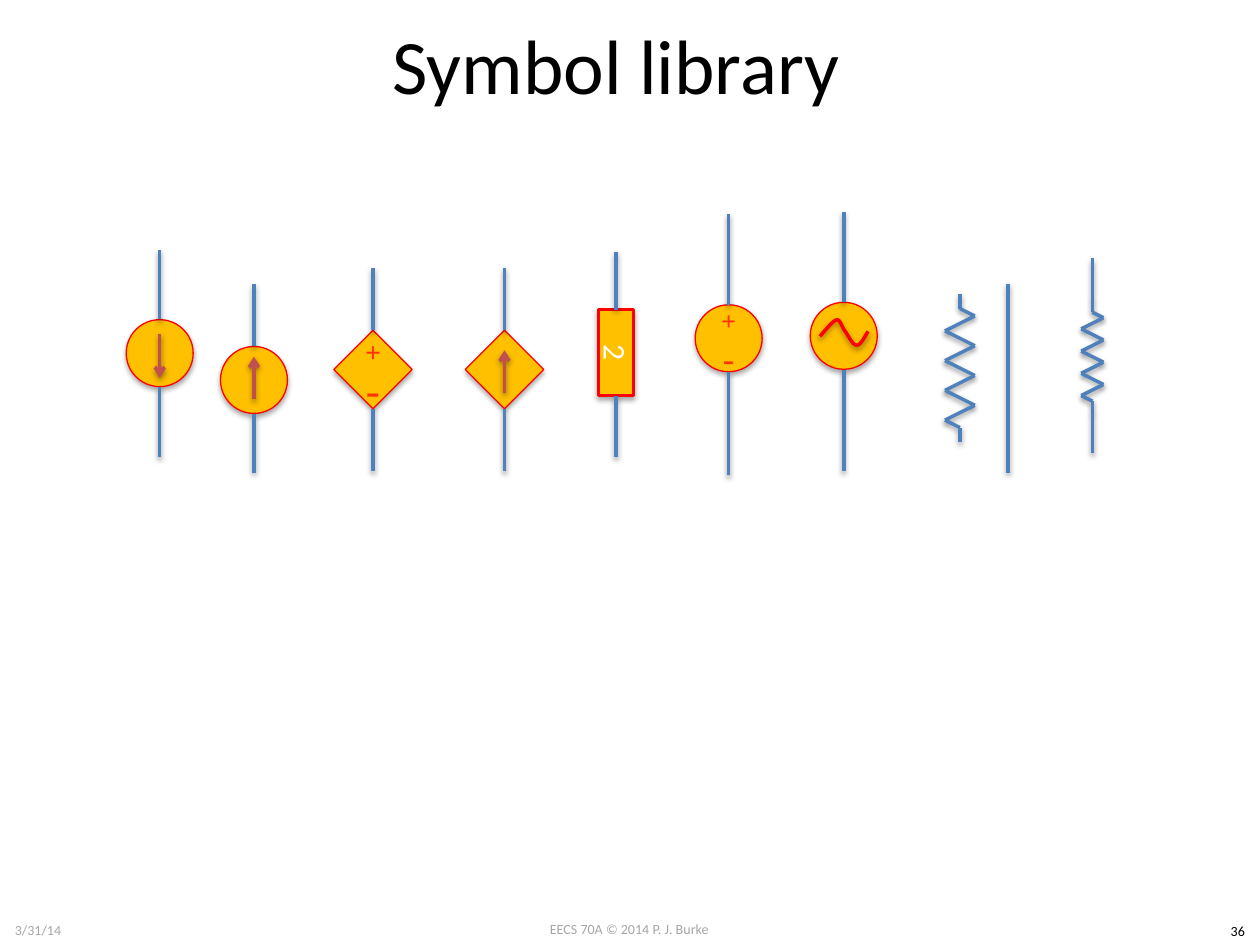
from lxml.etree import SubElement
from pptx import Presentation
from pptx.dml.color import RGBColor
from pptx.enum.shapes import MSO_CONNECTOR, MSO_SHAPE
from pptx.enum.text import MSO_ANCHOR, PP_ALIGN
from pptx.oxml.ns import qn
from pptx.util import Cm, Pt

WIRE, ARROW, RED, GOLD, SIGN = "4F81BD", "C0504D", "FF0000", "FFC000", "FF3300"
GREY, BLACK, WHITE = "A6A6A6", "000000", "FFFFFF"

TITLE = "Symbol library"
FOOTERS = [
    ("EECS 70A © 2014 P. J. Burke", 9.73, 18.44, 5.92, GREY, PP_ALIGN.CENTER),
    ("36", 24.51, 18.47, 0.89, BLACK, PP_ALIGN.CENTER),
    ("3/31/14", 0.05, 18.46, 5.26, GREY, PP_ALIGN.LEFT),
]

BODIES = {
    "circle": dict(kind=MSO_SHAPE.OVAL, width=1.35, height=1.35, turn=0, reach=0.68, line=0.75),
    "diamond": dict(kind=MSO_SHAPE.RECTANGLE, width=1.12, height=1.12, turn=45, reach=0.79, line=0.75),
    "box": dict(kind=MSO_SHAPE.RECTANGLE, width=1.73, height=0.71, turn=90, reach=0.87, line=1.5),
}
SYMBOLS = [
    dict(body="circle", x=3.22, y=7.12, top=5.03, bottom=9.22, arrow=(6.73, 7.62)),
    dict(body="circle", x=5.12, y=7.66, top=5.72, bottom=9.53, arrow=(8.05, 7.19)),
    dict(body="diamond", x=7.52, y=7.45, top=5.41, bottom=9.5, signs=(16, 24)),
    dict(body="diamond", x=10.17, y=7.45, top=5.41, bottom=9.5, arrow=(7.92, 7.06)),
    dict(body="box", x=12.42, y=7.11, top=5.08, bottom=9.22, label="2"),
    dict(body="circle", x=14.69, y=6.82, top=4.32, bottom=9.58, signs=(14.8, 20)),
    dict(body="circle", x=17.01, y=6.77, top=4.27, bottom=9.5, wave=True),
]
WAVE_START = (-0.48, 0.01)
WAVE_CURVES = [
    ((-0.35, -0.14), (-0.23, -0.29), (-0.15, -0.32)),
    ((-0.07, -0.35), (-0.04, -0.17), (0.03, -0.09)),
    ((0.1, 0.01), (0.18, 0.19), (0.26, 0.19)),
    ((0.34, 0.19), (0.41, 0.04), (0.49, -0.09)),
]
RESISTORS = [
    dict(x=19.35, top=5.92, height=3.0, leads=()),
    dict(x=22.02, top=6.07, height=2.24, leads=(5.21, 9.14)),
]
SINGLE_WIRE = (20.32, 5.72, 9.53)


def color(value):
    return RGBColor.from_string(value)


def add_shadow(shape, distance, opacity):
    effects = SubElement(shape._element.spPr, qn("a:effectLst"))
    shadow = SubElement(effects, qn("a:outerShdw"), blurRad=str(Pt(3.1)), dist=str(Pt(distance)),
                        dir="5400000", rotWithShape="0")
    black = SubElement(shadow, qn("a:srgbClr"), val=BLACK)
    SubElement(black, qn("a:alpha"), val=str(opacity * 1000))


def add_wire(shapes, start, end, stroke=WIRE, arrow=False):
    wire = shapes.add_connector(MSO_CONNECTOR.STRAIGHT, *map(Cm, start + end))
    wire.line.color.rgb = color(stroke)
    wire.line.width = Pt(2)
    if arrow:
        SubElement(wire.line._get_or_add_ln(), qn("a:tailEnd"), type="arrow")
    add_shadow(wire, 1.6, 38)


def write(shape, text, size, font, fill, align=PP_ALIGN.CENTER, bold=False):
    para = shape.text_frame.paragraphs[0]
    para.text = text
    para.alignment = align
    para.font.size = Pt(size)
    para.font.name = font
    para.font.bold = bold
    para.font.color.rgb = color(fill)


def add_body(shapes, x, y, kind, width, height, turn, line, reach):
    body = shapes.add_shape(kind, Cm(x - width / 2), Cm(y - height / 2), Cm(width), Cm(height))
    body.rotation = turn
    body.fill.solid()
    body.fill.fore_color.rgb = color(GOLD)
    body.line.color.rgb = color(RED)
    body.line.width = Pt(line)
    add_shadow(body, 1.8, 35)
    return body


def add_sign(shapes, text, x, y, size, bold):
    box = shapes.add_textbox(Cm(x - 0.33), Cm(y - 0.42), Cm(0.66), Cm(0.84))
    frame = box.text_frame
    frame.margin_left = frame.margin_right = frame.margin_top = frame.margin_bottom = 0
    frame.vertical_anchor = MSO_ANCHOR.MIDDLE
    write(box, text, size, "Times New Roman", SIGN, bold=bold)


def curve_points(start, curves, steps=10):
    for first, second, end in curves:
        for step in range(1, steps + 1):
            t = step / steps
            weights = (1 - t) ** 3, 3 * t * (1 - t) ** 2, 3 * t * t * (1 - t), t ** 3
            corners = start, first, second, end
            yield tuple(sum(w * corner[axis] for w, corner in zip(weights, corners)) for axis in (0, 1))
        start = end


def add_wave(shapes, x, y):
    def place(point):
        return Cm(x + point[0]), Cm(y + point[1])

    builder = shapes.build_freeform(*place(WAVE_START))
    builder.add_line_segments([place(p) for p in curve_points(WAVE_START, WAVE_CURVES)], close=False)
    wave = builder.convert_to_shape()
    wave.fill.background()
    wave.line.color.rgb = color(RED)
    wave.line.width = Pt(2)
    add_shadow(wave, 1.6, 38)


def add_symbol(page, body, x, y, top, bottom, arrow=None, signs=None, label=None, wave=False):
    shapes = page.shapes.add_group_shape().shapes
    shape = add_body(shapes, x, y, **BODIES[body])
    reach = BODIES[body]["reach"]
    add_wire(shapes, (x, y - reach), (x, top))
    add_wire(shapes, (x, y + reach), (x, bottom))
    if arrow:
        add_wire(shapes, (x, arrow[0]), (x, arrow[1]), ARROW, arrow=True)
    if signs:
        add_sign(shapes, "+", x, y - 0.36, signs[0], True)
        add_sign(shapes, "-", x, y + 0.38, signs[1], False)
    if label:
        shape.text_frame.vertical_anchor = MSO_ANCHOR.MIDDLE
        write(shape, label, 18, "Calibri", WHITE)
    if wave:
        add_wave(shapes, x, y)


def add_resistor(page, x, top, height, leads):
    shapes = page.shapes.add_group_shape().shapes
    unit = height / 10
    zigzag = [(x + unit * (-1) ** turn, top + unit * (1.5 + turn)) for turn in range(8)]
    points = [(x, top), (x, top + unit), *zigzag, (x, top + 9 * unit), (x, top + height)]
    if leads:
        points = [(x, leads[0]), *points, (x, leads[1])]
    for start, end in zip(points, points[1:]):
        add_wire(shapes, start, end)


def main():
    deck = Presentation()
    deck.slide_width, deck.slide_height = Cm(25.4), Cm(19.05)
    page = deck.slides.add_slide(deck.slide_layouts[5])

    title = page.shapes.title
    title.left, title.top, title.width, title.height = Cm(0.99), Cm(-0.3), Cm(22.86), Cm(3.18)
    title.text_frame.vertical_anchor = MSO_ANCHOR.MIDDLE
    write(title, TITLE, 44, "Calibri", BLACK)

    for symbol in SYMBOLS:
        add_symbol(page, **symbol)
    for resistor in RESISTORS:
        add_resistor(page, **resistor)
    x, top, bottom = SINGLE_WIRE
    add_wire(page.shapes, (x, bottom), (x, top))

    for text, left, top, width, fill, align in FOOTERS:
        box = page.shapes.add_textbox(Cm(left), Cm(top), Cm(width), Cm(0.59))
        box.text_frame.word_wrap = True
        write(box, text, 8, "Calibri", fill, align)

    deck.save("out.pptx")


if __name__ == "__main__":
    main()
